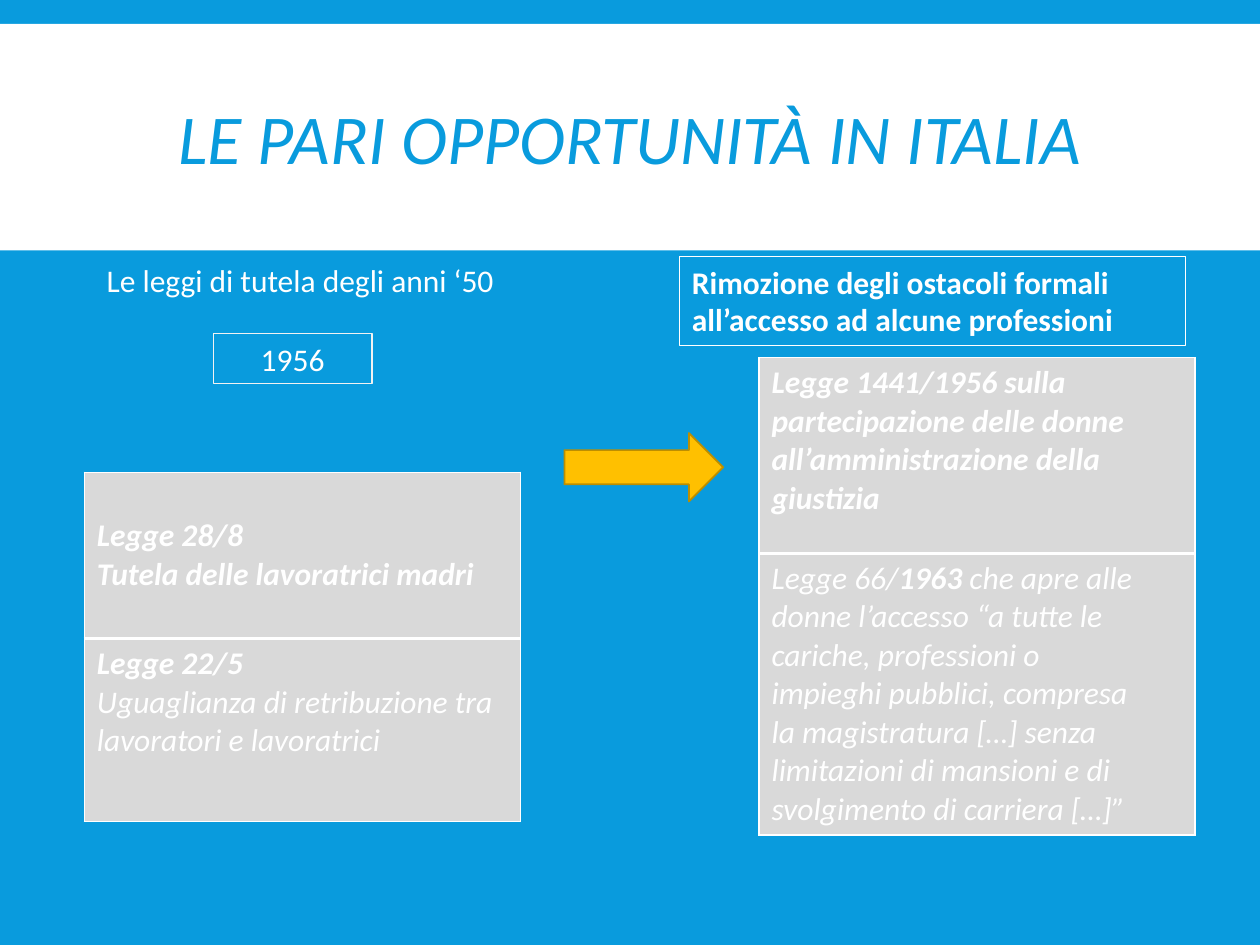
import pptx
import pptx.util
import pptx.dml.color
import pptx.enum.shapes
import pptx.enum.text
import pptx.oxml
import pptx.oxml.ns
import lxml.etree

Cm = pptx.util.Cm
Pt = pptx.util.Pt
SHAPES = pptx.enum.shapes.MSO_SHAPE
ALIGN = pptx.enum.text.PP_ALIGN
ANCHOR = pptx.enum.text.MSO_ANCHOR

BLUE, WHITE, GREY = "099BDD", "FFFFFF", "D9D9D9"
PLAIN = {"size": Pt(18), "name": "Calibri"}
BOLD = {**PLAIN, "bold": True}
ITALIC = {**PLAIN, "italic": True, "bold": False}
STRONG = {**ITALIC, "bold": True}
TITLE = {**PLAIN, "size": Pt(40), "italic": True}


def color(value):
    """Turn a hex string into a colour."""
    return pptx.dml.color.RGBColor.from_string(value)


def write(frame, lines, ink=WHITE, **layout):
    """Fill a text frame with paragraphs, each a list of (text, format) spans."""
    for index, spans in enumerate(lines):
        para = frame.paragraphs[0] if index == 0 else frame.add_paragraph()
        for key, value in layout.items():
            setattr(para, key, value)
        for text, style in spans:
            span = para.add_run()
            span.text = text
            span.font.color.rgb = color(ink)
            for key, value in style.items():
                setattr(span.font, key, value)


def add_text(page, place, text, style, ink=WHITE, anchor=ANCHOR.TOP, line=None, **layout):
    """Add a text box, outlined if a line colour is given."""
    box = page.shapes.add_textbox(*map(Cm, place))
    box.text_frame.word_wrap = True
    box.text_frame.vertical_anchor = anchor
    if line:
        box.line.color.rgb = color(line)
        box.line.width = Pt(0.75)
    write(box.text_frame, [[(text, style)]], ink, **layout)


def add_block(page, kind, place, fill, line=None):
    """Add a filled preset shape without text."""
    block = page.shapes.add_shape(kind, *map(Cm, place))
    block.shadow.inherit = False
    block.fill.solid()
    block.fill.fore_color.rgb = color(fill)
    if line:
        block.line.color.rgb = color(line)
        block.line.width = Pt(1)
    else:
        block.line.fill.background()


def add_borders(cell, widths):
    """Draw white cell borders; widths gives points for each side."""
    properties = cell._tc.get_or_add_tcPr()
    for index, (side, width) in enumerate(widths.items()):
        border = pptx.oxml.parse_xml(
            f'<a:ln{side} {pptx.oxml.ns.nsdecls("a")} w="{Pt(width)}"><a:solidFill>'
            f'<a:srgbClr val="{WHITE}"/></a:solidFill></a:ln{side}>')
        properties.insert(index, border)


def add_laws(page, left, top, width, rows):
    """Add a one-column table from (height, anchor, lines) rows."""
    total = sum(height for height, _, _ in rows)
    frame = page.shapes.add_table(len(rows), 1, *map(Cm, (left, top, width, total)))
    table = frame.table
    table.first_row = table.horz_banding = False
    for index, (height, anchor, lines) in enumerate(rows):
        table.rows[index].height = Cm(height)
        cell = table.cell(index, 0)
        cell.vertical_anchor = anchor
        cell.fill.solid()
        cell.fill.fore_color.rgb = color(GREY)
        last = index == len(rows) - 1
        add_borders(cell, {"L": 1, "R": 1, "T": 1 if index == 0 else 2, "B": 1 if last else 2})
        write(cell.text_frame, lines)


def main():
    """Build the slide and save it."""
    deck = pptx.Presentation()
    deck.slide_width, deck.slide_height = Cm(25.4), Cm(19.05)
    page = deck.slides.add_slide(deck.slide_layouts[6])
    page.background.fill.solid()
    page.background.fill.fore_color.rgb = color(BLUE)

    add_block(page, SHAPES.RECTANGLE, (0, 0.48, 25.4, 4.57), WHITE)
    add_text(page, (1.9, 0.79, 21.6, 4.19), "LE PARI OPPORTUNITÀ IN ITALIA", TITLE, BLUE,
             ANCHOR.MIDDLE, alignment=ALIGN.CENTER, line_spacing=0.85)

    add_laws(page, 1.7, 9.52, 8.79, [
        (3.35, ANCHOR.MIDDLE, [[("Legge 28/8", STRONG)],
                               [("Tutela delle lavoratrici madri", STRONG)]]),
        (3.69, ANCHOR.TOP, [[("Legge 22/5", STRONG)],
                            [("Uguaglianza di retribuzione tra lavoratori e lavoratrici", ITALIC)]]),
    ])
    justice = ["Legge 1441/1956 sulla", "partecipazione delle donne",
               "all’amministrazione della", "giustizia"]
    careers = ["donne l’accesso “a tutte le", "cariche, professioni o",
               "impieghi pubblici, compresa", "la magistratura […] senza",
               "limitazioni di mansioni e di", "svolgimento di carriera […]”"]
    opening = [("Legge 66/", ITALIC), ("1963", STRONG), (" che apre alle", ITALIC)]
    add_laws(page, 15.3, 7.21, 8.79, [
        (3.94, ANCHOR.TOP, [[(text, STRONG)] for text in justice]),
        (5.68, ANCHOR.TOP, [opening] + [[(text, ITALIC)] for text in careers]),
    ])

    add_text(page, (1.9, 5.13, 9.4, 1.02), "Le leggi di tutela degli anni ‘50", PLAIN)
    add_text(page, (4.3, 6.72, 3.2, 1.02), "1956", PLAIN, line="F2F2F2", alignment=ALIGN.CENTER)
    add_text(page, (13.7, 5.17, 10.2, 1.8),
             "Rimozione degli ostacoli formali all’accesso ad alcune professioni",
             BOLD, line=WHITE)
    add_block(page, SHAPES.RIGHT_ARROW, (11.38, 8.73, 3.2, 1.38), "FFC000", "BD8E00")
    deck.save("out.pptx")


main()
